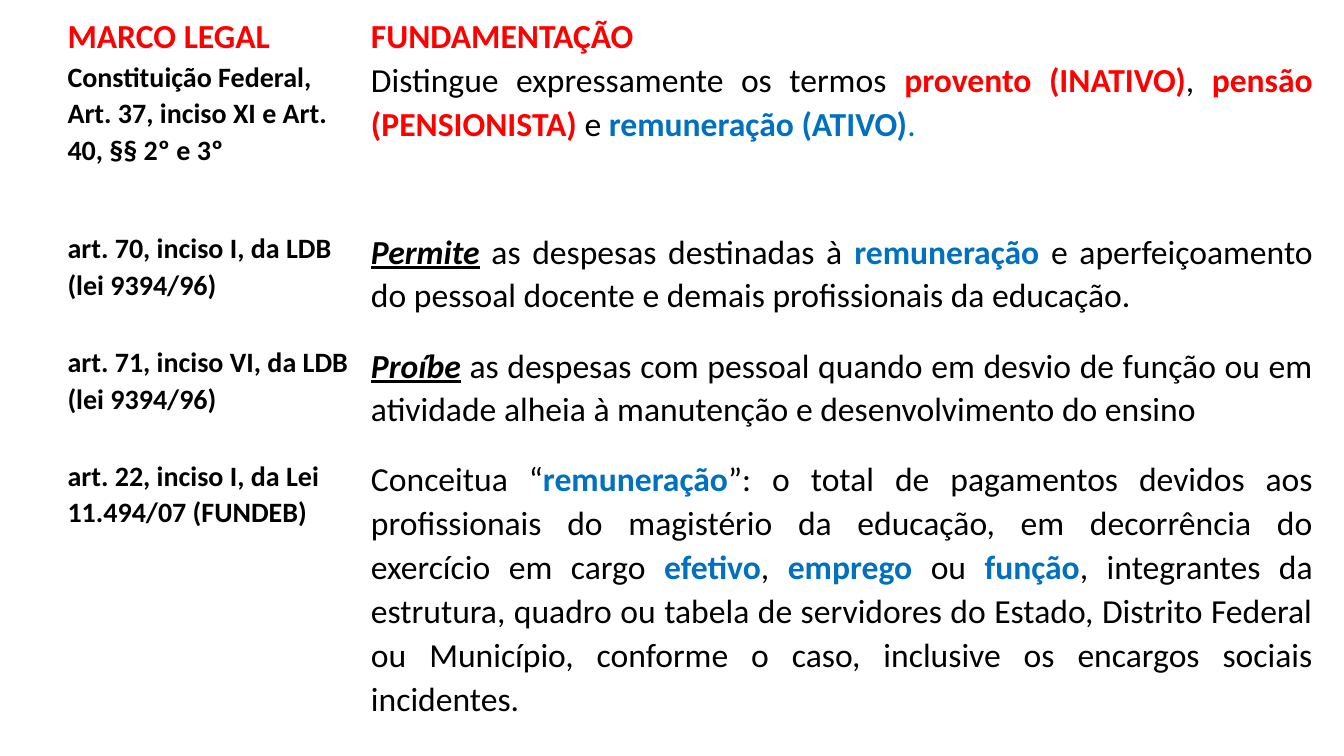
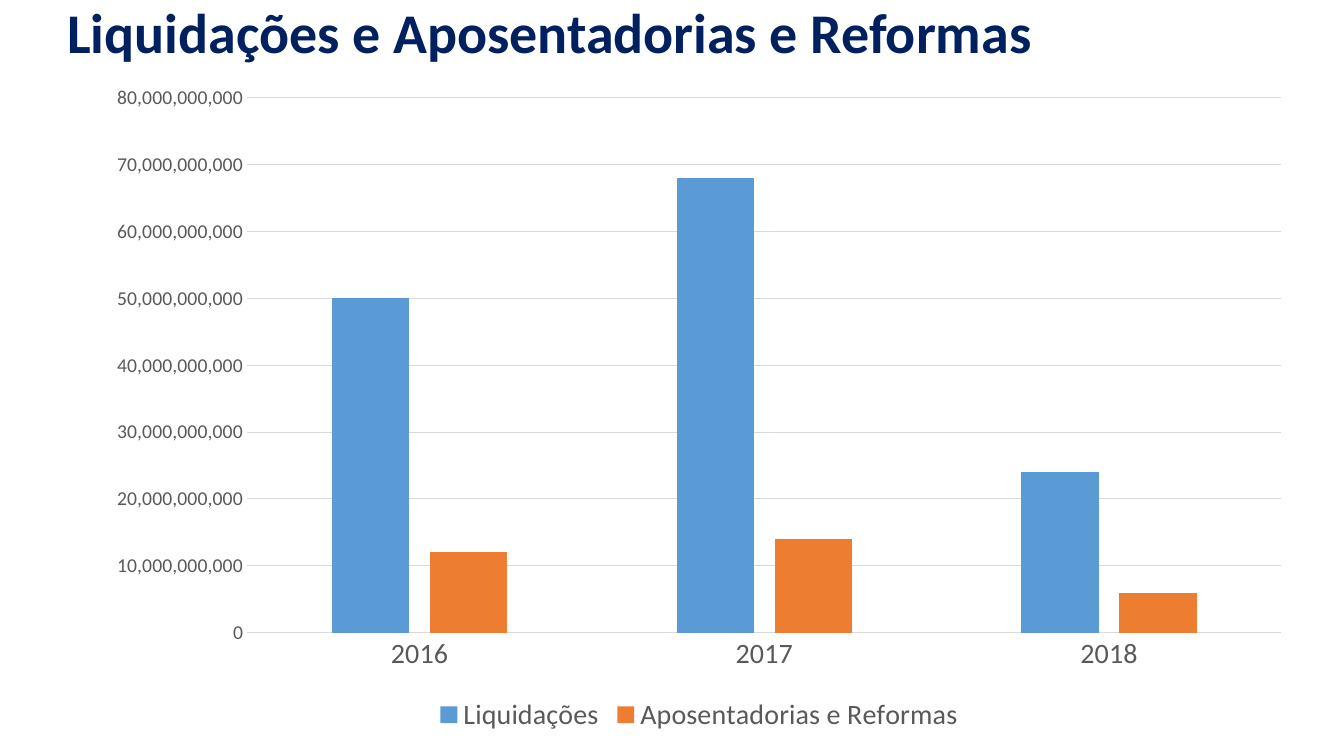
from dataclasses import dataclass
from typing import Any

from lxml import etree
from pptx import Presentation
from pptx import util as u
from pptx.chart import data as chart_data
from pptx.dml.color import RGBColor
from pptx.enum import chart as charts
from pptx.enum import text
from pptx.oxml.ns import qn

EMU_PER_PX = 9144
FONT = "Calibri"
BLACK, WHITE, RED, BLUE = "000000", "FFFFFF", "FF0000", "0070C0"
NAVY, GRAY, RULE = "002060", "595959", "D9D9D9"

STYLES: dict[str, dict[str, Any]] = {
    "plain": {"color": BLACK, "bold": False},
    "label": {"color": BLACK, "bold": True},
    "red": {"color": RED, "bold": True},
    "blue": {"color": BLUE, "bold": True},
    "blue_plain": {"color": BLUE, "bold": False},
    "verb": {"color": BLACK, "bold": True, "italic": True, "underline": True},
    "title": {"color": NAVY, "bold": True},
}


@dataclass(frozen=True)
class Run:
    text: str
    style: str = "plain"


@dataclass(frozen=True)
class Row:
    height: int
    law: Run
    grounds: list[Run]
    header: bool = False


@dataclass(frozen=True)
class Series:
    name: str
    values: tuple[int, ...]
    color: str


COLUMN_WIDTHS = (301, 948)
ROWS = [
    Row(28, Run("MARCO LEGAL", "red"), [Run("FUNDAMENTAÇÃO", "red")], True),
    Row(170, Run("Constituição Federal, Art. 37, inciso XI e Art. 40, §§ 2º e 3º", "label"), [
        Run("Distingue expressamente os termos "),
        Run("provento (INATIVO)", "red"),
        Run(", "),
        Run("pensão (PENSIONISTA) ", "red"),
        Run("e "),
        Run("remuneração (ATIVO)", "blue"),
        Run(".", "blue_plain"),
    ]),
    Row(113, Run("art. 70, inciso I, da LDB (lei 9394/96)", "label"), [
        Run("Permite", "verb"),
        Run(" as despesas destinadas à "),
        Run("remuneração ", "blue"),
        Run("e aperfeiçoamento do pessoal docente e demais profissionais da educação."),
    ]),
    Row(113, Run("art. 71, inciso VI, da LDB (lei 9394/96)", "label"), [
        Run("Proíbe", "verb"),
        Run(" as despesas com pessoal quando em desvio de função ou em atividade "
            "alheia à manutenção e desenvolvimento do ensino"),
    ]),
    Row(276, Run("art. 22, inciso I, da Lei 11.494/07 (FUNDEB)", "label"), [
        Run("Conceitua “"),
        Run("remuneração", "blue"),
        Run("”: o total de pagamentos devidos aos profissionais do magistério da "
            "educação, em decorrência do exercício em cargo "),
        Run("efetivo", "blue"),
        Run(", "),
        Run("emprego ", "blue"),
        Run("ou "),
        Run("função", "blue"),
        Run(", integrantes da estrutura, quadro ou tabela de servidores do Estado, "
            "Distrito Federal ou Município, conforme o caso, inclusive os encargos "
            "sociais incidentes."),
    ]),
]

BILLION = 10**9
YEARS = ("2016", "2017", "2018")
SERIES = [
    Series("Liquidações", (50, 68, 24), "5B9BD5"),
    Series("Aposentadorias e Reformas", (12, 14, 6), "ED7D31"),
]


def px(n: int) -> u.Emu:
    return u.Emu(n * EMU_PER_PX)


def rgb(color: str) -> RGBColor:
    return RGBColor.from_string(color)


def apply(target: Any, **values: Any) -> None:
    for name, value in values.items():
        setattr(target, name, value)


def set_font(font: Any, size: int, color: str, **values: Any) -> None:
    apply(font, name=FONT, size=u.Pt(size), **values)
    font.color.rgb = rgb(color)


def add_runs(p: Any, runs: list[Run], size: int) -> None:
    for run in runs:
        r = p.add_run()
        r.text = run.text
        set_font(r.font, size, **STYLES[run.style])


def set_borders(cell: Any, **widths: int) -> None:
    properties = cell._tc.get_or_add_tcPr()
    for index, (side, width) in enumerate(widths.items()):
        line = etree.Element(qn(f"a:ln{side}"), w=str(u.Pt(width)))
        fill = etree.SubElement(line, qn("a:solidFill"))
        etree.SubElement(fill, qn("a:srgbClr"), val=WHITE)
        properties.insert(index, line)


def fill_cell(cell: Any, runs: list[Run], size: int, justify: bool, header: bool) -> None:
    apply(cell, margin_left=px(7), margin_right=px(7), margin_top=0, margin_bottom=0)
    cell.fill.solid()
    cell.fill.fore_color.rgb = rgb(WHITE)
    set_borders(cell, L=1, R=1, T=1, B=3 if header else 1)
    p = cell.text_frame.paragraphs[0]
    apply(p, line_spacing=1.07, space_after=u.Pt(8))
    if justify:
        p.alignment = text.PP_ALIGN.JUSTIFY
    add_runs(p, runs, size)


def add_legal_table(s: Any) -> None:
    height = sum(row.height for row in ROWS)
    table = s.shapes.add_table(len(ROWS), len(COLUMN_WIDTHS), px(60), px(14),
                               px(sum(COLUMN_WIDTHS)), px(height)).table
    apply(table, first_row=False, horz_banding=False)
    for column, width in zip(table.columns, COLUMN_WIDTHS):
        column.width = px(width)
    for i, row in enumerate(ROWS):
        table.rows[i].height = px(row.height)
        fill_cell(table.cell(i, 0), [row.law], 24 if row.header else 20, False, row.header)
        fill_cell(table.cell(i, 1), row.grounds, 24, not row.header, row.header)


def add_title(s: Any, title: str) -> None:
    tf = s.shapes.add_textbox(px(57), px(0), px(1150), px(145)).text_frame
    tf.word_wrap = True
    p = tf.paragraphs[0]
    p.line_spacing = 0.9
    add_runs(p, [Run(title, "title")], 40)


def style_line(line: Any) -> None:
    line.color.rgb = rgb(RULE)
    line.width = u.Pt(0.75)


def add_spending_chart(s: Any) -> None:
    data = chart_data.CategoryChartData(number_format="#,##0")
    data.categories = YEARS
    for series in SERIES:
        data.add_series(series.name, [value * BILLION for value in series.values])
    chart = s.shapes.add_chart(charts.XL_CHART_TYPE.COLUMN_CLUSTERED, px(92), px(72),
                               px(1203), px(660), data).chart
    set_font(chart.font, 10, BLACK)
    apply(chart, has_title=False, has_legend=True)
    apply(chart.legend, position=charts.XL_LEGEND_POSITION.BOTTOM, include_in_layout=False)
    set_font(chart.legend.font, 20, GRAY)

    plot = chart.plots[0]
    apply(plot, gap_width=219, overlap=-27, vary_by_categories=False)
    for drawn, series in zip(plot.series, SERIES):
        drawn.format.fill.solid()
        drawn.format.fill.fore_color.rgb = rgb(series.color)

    for axis, size in ((chart.category_axis, 20), (chart.value_axis, 14)):
        apply(axis, major_tick_mark=charts.XL_TICK_MARK.NONE,
              minor_tick_mark=charts.XL_TICK_MARK.NONE)
        set_font(axis.tick_labels.font, size, GRAY)
    style_line(chart.category_axis.format.line)

    amounts = chart.value_axis
    apply(amounts, minimum_scale=0, maximum_scale=80 * BILLION, major_unit=10 * BILLION,
          has_major_gridlines=True)
    apply(amounts.tick_labels, number_format="#,##0", number_format_is_linked=False)
    amounts.format.line.fill.background()
    style_line(amounts.major_gridlines.format.line)


def main() -> None:
    prs = Presentation()
    apply(prs, slide_width=px(1333), slide_height=px(750))
    blank = prs.slide_layouts[6]
    add_legal_table(prs.slides.add_slide(blank))
    s = prs.slides.add_slide(blank)
    add_spending_chart(s)
    add_title(s, "Liquidações e Aposentadorias e Reformas")
    prs.save("out.pptx")


if __name__ == "__main__":
    main()
